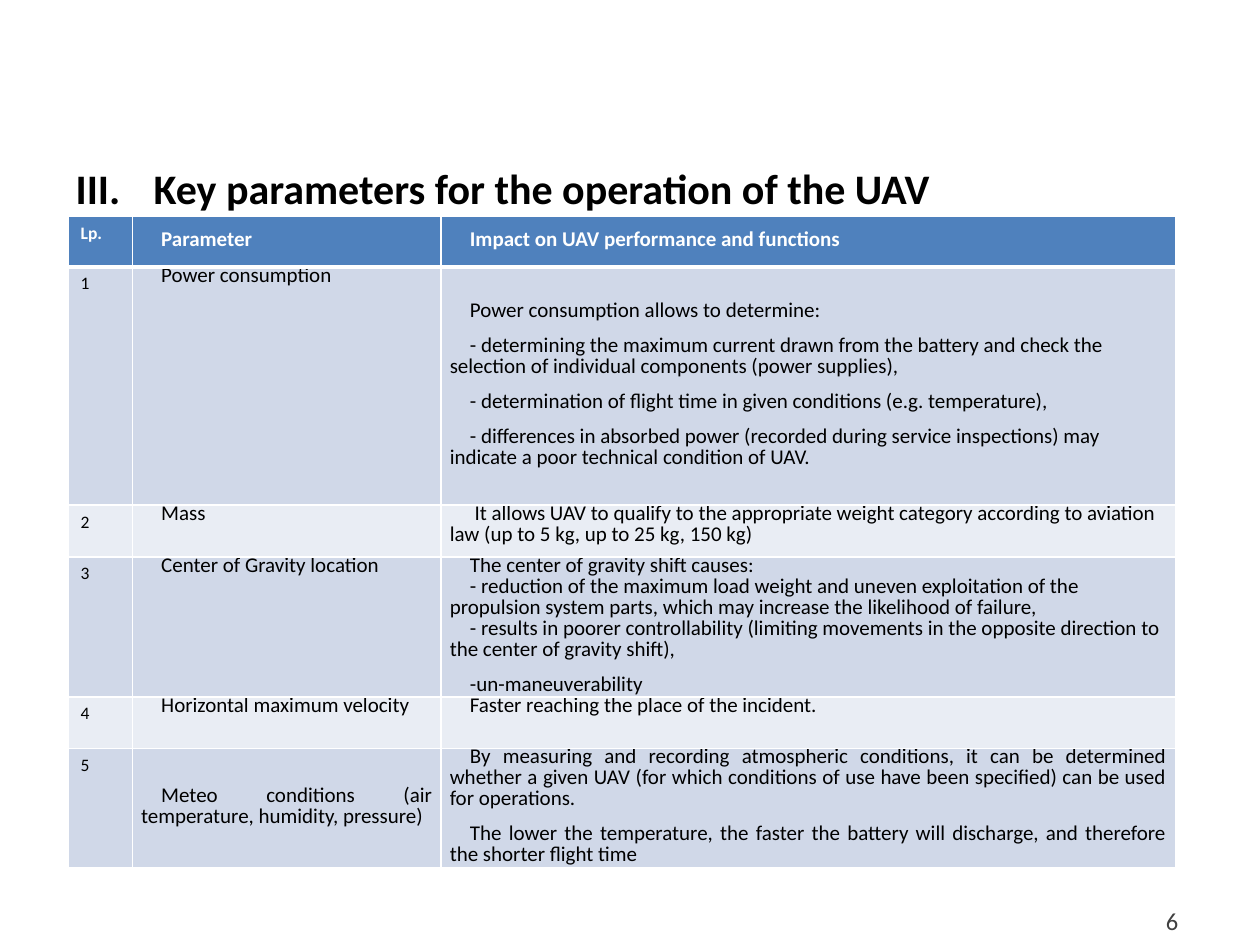
from lxml.etree import SubElement as Sub, Element
from pptx import Presentation
from pptx.dml.color import RGBColor
from pptx.enum.text import MSO_ANCHOR as Anchor, MSO_AUTO_SIZE as Size, PP_ALIGN as Align
from pptx.oxml.ns import qn
from pptx.util import Inches, Pt

WHITE = RGBColor(255, 255, 255)
BLACK = RGBColor(0, 0, 0)
GRAY = RGBColor(0x40, 0x40, 0x40)
BLUE = RGBColor(0x4F, 0x81, 0xBD)
BANDS = [RGBColor(0xE9, 0xED, 0xF4), RGBColor(0xD0, 0xD8, 0xE8)]

WIDTHS = [0.51, 2.45, 5.83]
HEIGHTS = [0.4, 1.89, 0.41, 1.11, 0.41, 0.94]
ROWS = [
    ("Lp.", "Parameter", ["Impact on UAV performance and functions"]),
    ("1", "Power consumption", [
        "Power consumption allows to determine:",
        "- determining the maximum current drawn from the battery and check the "
        "selection of individual components (power supplies),",
        "- determination of flight time in given conditions (e.g. temperature),",
        "- differences in absorbed power (recorded during service inspections) may "
        "indicate a poor technical condition of UAV.",
    ]),
    ("2", "Mass", [
        " It allows UAV to qualify to the appropriate weight category according to "
        "aviation law (up to 5 kg, up to 25 kg, 150 kg)",
    ]),
    ("3", "Center of Gravity location", [
        "The center of gravity shift causes:",
        "- reduction of the maximum load weight and uneven exploitation of the "
        "propulsion system parts, which may increase the likelihood of failure,",
        "- results in poorer controllability (limiting movements in the opposite "
        "direction to the center of gravity shift),",
        "-un-maneuverability",
    ]),
    ("4", "Horizontal maximum velocity", ["Faster reaching the place of the incident."]),
    ("5", "Meteo conditions (air temperature, humidity, pressure)", [
        "By measuring and recording atmospheric conditions, it can be determined "
        "whether a given UAV (for which conditions of use have been specified) can "
        "be used for operations.",
        "The lower the temperature, the faster the battery will discharge, and "
        "therefore the shorter flight time",
    ]),
]


def style(para, size, color, bold=False):
    """Set the font of each run in a paragraph."""
    for run in para.runs:
        font = run.font
        font.name, font.size, font.bold = "Calibri", Pt(size), bold
        font.color.rgb = color


def place(shape, left, top, width, height):
    """Move and size a shape."""
    shape.left, shape.top = Inches(left), Inches(top)
    shape.width, shape.height = Inches(width), Inches(height)


def add_title(slide):
    """Fill the title with its Roman numeral."""
    title = slide.shapes.title
    place(title, 0.5, 1.23, 9, 0.44)
    frame = title.text_frame
    frame.text = "Key parameters for the operation of the UAV"
    frame.auto_size, frame.vertical_anchor = Size.NONE, Anchor.TOP
    frame.margin_top, frame.margin_bottom = Inches(0.06), 0
    para = frame.paragraphs[0]
    para.alignment = Align.LEFT
    props = para._p.get_or_add_pPr()
    props.set("marL", str(Inches(0.62)))
    props.set("indent", str(-Inches(0.62)))
    Sub(props, qn("a:buFont"), typeface="+mj-lt")
    Sub(props, qn("a:buAutoNum"), type="romanUcPeriod", startAt="3")
    style(para, 24, BLACK, True)


def add_page(slide, text):
    """Add the page number."""
    box = slide.shapes.add_textbox(Inches(7.12), Inches(7.14), Inches(2.33), Inches(0.33))
    frame = box.text_frame
    frame.word_wrap = True
    frame.text = text
    para = frame.paragraphs[0]
    para.alignment = Align.RIGHT
    style(para, 14, GRAY)


def edge(cell, base):
    """Draw white borders round a cell."""
    props = cell._tc.get_or_add_tcPr()
    for spot, side in enumerate("LRTB"):
        line = Element(qn(f"a:ln{side}"), w=str(Pt(base if side == "B" else 1)))
        fill = Sub(line, qn("a:solidFill"))
        Sub(fill, qn("a:srgbClr"), val=str(WHITE))
        props.insert(spot, line)


def fill_cell(cell, lines, row, col):
    """Write and format one table cell."""
    head = row == 0
    cell.fill.solid()
    cell.fill.fore_color.rgb = BLUE if head else BANDS[row % 2]
    edge(cell, 3 if head else 1)
    cell.text_frame.text = "\n".join(lines)
    if col:
        cell.margin_left = cell.margin_right = Inches(0.07)
        cell.margin_top = Inches(0.28 if (row, col) == (1, 2) else 0)
        cell.margin_bottom = 0
    middle = col and (head or (row, col) == (5, 1))
    cell.vertical_anchor = Anchor.MIDDLE if middle else Anchor.TOP
    for i, para in enumerate(cell.text_frame.paragraphs):
        if col:
            para.line_spacing = Pt(12)
            para.space_after = Pt(0 if row == 3 and i < 2 else 8)
            para.alignment = Align.JUSTIFY if row == 5 else Align.LEFT
            para._p.get_or_add_pPr().set("indent", str(Inches(0.16)))
        style(para, 12 if col else 10, WHITE if head else BLACK, head)


def add_grid(slide):
    """Add the parameter table."""
    grid = slide.shapes.add_table(
        len(ROWS), len(WIDTHS), Inches(0.54), Inches(1.72),
        Inches(sum(WIDTHS)), Inches(sum(HEIGHTS))).table
    for col, width in zip(grid.columns, WIDTHS):
        col.width = Inches(width)
    for r, (num, name, notes) in enumerate(ROWS):
        grid.rows[r].height = Inches(HEIGHTS[r])
        for c, lines in enumerate(([num], [name], notes)):
            fill_cell(grid.cell(r, c), lines, r, c)


def main():
    """Build and save the slide."""
    deck = Presentation()
    deck.slide_width, deck.slide_height = Inches(10), Inches(7.5)
    slide = deck.slides.add_slide(deck.slide_layouts[5])
    add_title(slide)
    add_page(slide, "6")
    add_grid(slide)
    deck.save("out.pptx")


if __name__ == "__main__":
    main()
